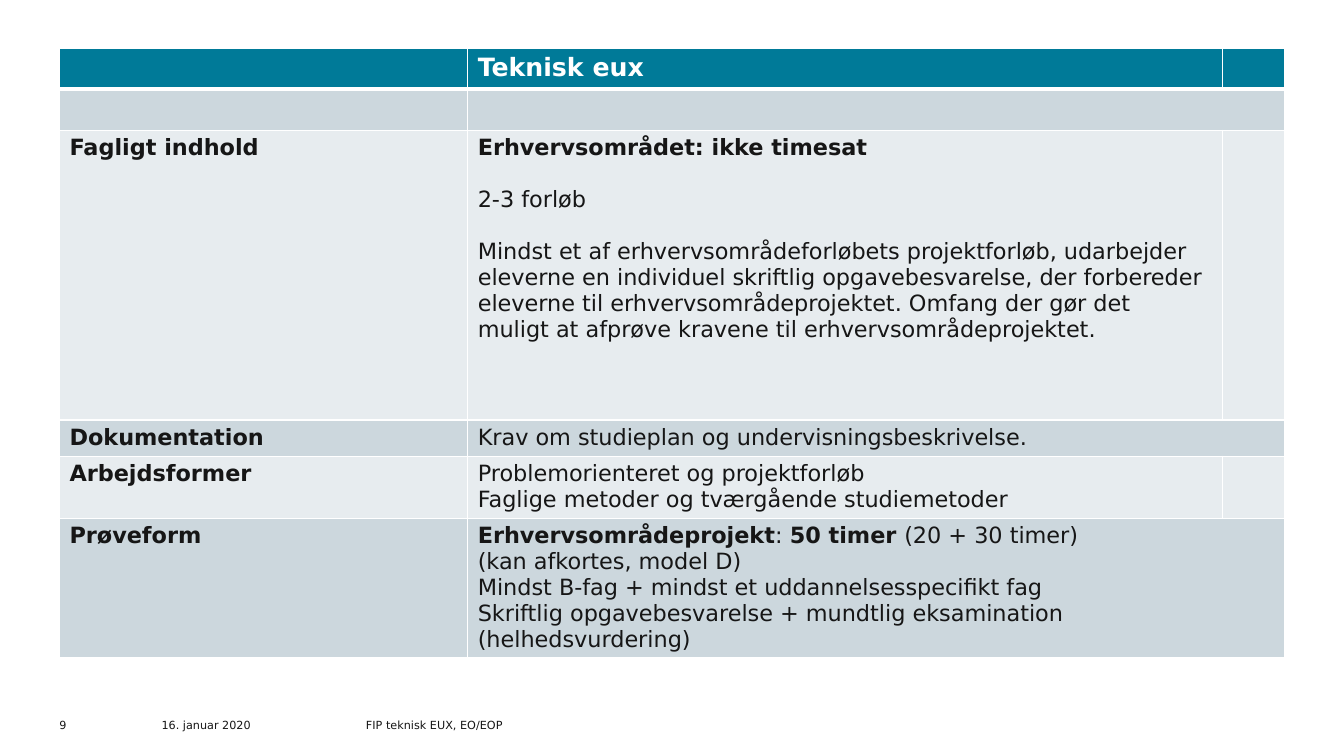
from dataclasses import dataclass

from lxml.etree import SubElement
from pptx import Presentation
from pptx.dml.color import RGBColor
from pptx.enum.text import MSO_ANCHOR
from pptx.oxml.ns import qn
from pptx.util import Pt


@dataclass(frozen=True)
class Theme:
    font: str = "DejaVu Sans"
    ink: str = "161616"
    white: str = "FFFFFF"
    header: str = "007A98"
    dark_band: str = "CCD7DD"
    light_band: str = "E7ECEF"
    header_size: float = 18
    body_size: float = 16
    footer_size: float = 8
    thin: float = 1
    thick: float = 3
    paragraph_gap: float = 18.6


THEME = Theme()
COLUMN_WIDTHS = (291.6, 539.3, 43.9)
ROW_HEIGHTS = (28, 28, 207, 25.8, 44.4, 99.2)

# Each row: label, then paragraphs made of (text, bold) runs
ROWS = [
    ("", [[("Teknisk eux", True)]]),
    ("", []),
    ("Fagligt indhold", [
        [("Erhvervsområdet: ikke timesat", True)],
        [("2-3 forløb", False)],
        [("Mindst et af erhvervsområdeforløbets projektforløb, udarbejder "
          "eleverne en individuel skriftlig opgavebesvarelse, der forbereder "
          "eleverne til erhvervsområdeprojektet. Omfang der gør det", False)],
        [("muligt at afprøve kravene til erhvervsområdeprojektet.", False)],
    ]),
    ("Dokumentation", [[("Krav om studieplan og undervisningsbeskrivelse.", False)]]),
    ("Arbejdsformer", [
        [("Problemorienteret og projektforløb", False)],
        [("Faglige metoder og tværgående studiemetoder", False)],
    ]),
    ("Prøveform", [
        [("Erhvervsområdeprojekt", True), (": ", False),
         ("50 timer ", True), ("(20 + 30 timer)", False)],
        [("(kan afkortes, model D)", False)],
        [("Mindst B-fag + mindst et uddannelsesspecifikt fag", False)],
        [("Skriftlig opgavebesvarelse + mundtlig eksamination "
          "(helhedsvurdering)", False)],
    ]),
]
SPACED_PARAGRAPHS = {"2-3 forløb", ROWS[2][1][2][0][0]}

# Footer parts: text, offset from the footer's left edge, width
FOOTER = [
    ("9", 0, 21.6),
    ("16. januar 2020", 72.9, 100),
    ("FIP teknisk EUX, EO/EOP", 218.9, 342.7),
]


def style_run(run, size, color, bold=False):
    run.font.name = THEME.font
    run.font.size = Pt(size)
    run.font.bold = bold
    run.font.color.rgb = RGBColor.from_string(color)


def fill_cell(cell, paragraphs, size, color):
    frame = cell.text_frame
    for index, runs in enumerate(paragraphs):
        paragraph = frame.add_paragraph() if index else frame.paragraphs[0]
        if runs[0][0] in SPACED_PARAGRAPHS:
            paragraph.space_before = Pt(THEME.paragraph_gap)
        for text, bold in runs:
            run = paragraph.add_run()
            run.text = text
            style_run(run, size, color, bold)


def paint_cell(cell, band, top, bottom):
    # Borders come before the fill in the cell properties
    properties = cell._tc.get_or_add_tcPr()
    borders = {"a:lnL": THEME.thin, "a:lnR": THEME.thin, "a:lnT": top, "a:lnB": bottom}
    for tag, width in borders.items():
        line = SubElement(properties, qn(tag), w=str(Pt(width)))
        solid = SubElement(line, qn("a:solidFill"))
        SubElement(solid, qn("a:srgbClr"), val=THEME.white)
    cell.fill.solid()
    cell.fill.fore_color.rgb = RGBColor.from_string(band)


def add_overview_table(slide, left, top):
    table = slide.shapes.add_table(
        len(ROWS), len(COLUMN_WIDTHS), Pt(left), Pt(top),
        Pt(sum(COLUMN_WIDTHS)), Pt(sum(ROW_HEIGHTS))).table
    for column, width in zip(table.columns, COLUMN_WIDTHS):
        column.width = Pt(width)

    for index, (label, paragraphs) in enumerate(ROWS):
        table.rows[index].height = Pt(ROW_HEIGHTS[index])
        is_header, is_dark = index == 0, index % 2 == 1
        band = (THEME.header if is_header
                else THEME.dark_band if is_dark else THEME.light_band)
        for column in range(len(COLUMN_WIDTHS)):
            paint_cell(table.cell(index, column), band,
                       THEME.thick if index == 1 else THEME.thin,
                       THEME.thick if is_header else THEME.thin)
        if is_dark:
            table.cell(index, 1).merge(table.cell(index, 2))
        size = THEME.header_size if is_header else THEME.body_size
        color = THEME.white if is_header else THEME.ink
        if label:
            fill_cell(table.cell(index, 0), [[(label, True)]], size, color)
        fill_cell(table.cell(index, 1), paragraphs, size, color)


def add_footer(slide, left, top, height):
    for text, offset, width in FOOTER:
        frame = slide.shapes.add_textbox(
            Pt(left + offset), Pt(top), Pt(width), Pt(height)).text_frame
        frame.word_wrap = True
        frame.vertical_anchor = MSO_ANCHOR.BOTTOM
        frame.margin_left = frame.margin_right = Pt(0)
        frame.margin_top = frame.margin_bottom = Pt(0)
        frame.text = text
        style_run(frame.paragraphs[0].runs[0], THEME.footer_size, THEME.ink)


def main():
    presentation = Presentation()
    presentation.slide_width, presentation.slide_height = Pt(960), Pt(540)
    slide = presentation.slides.add_slide(presentation.slide_layouts[6])
    add_overview_table(slide, left=42.5, top=34.6)
    add_footer(slide, left=42.5, top=508.3, height=14.4)
    presentation.save("out.pptx")


if __name__ == "__main__":
    main()
